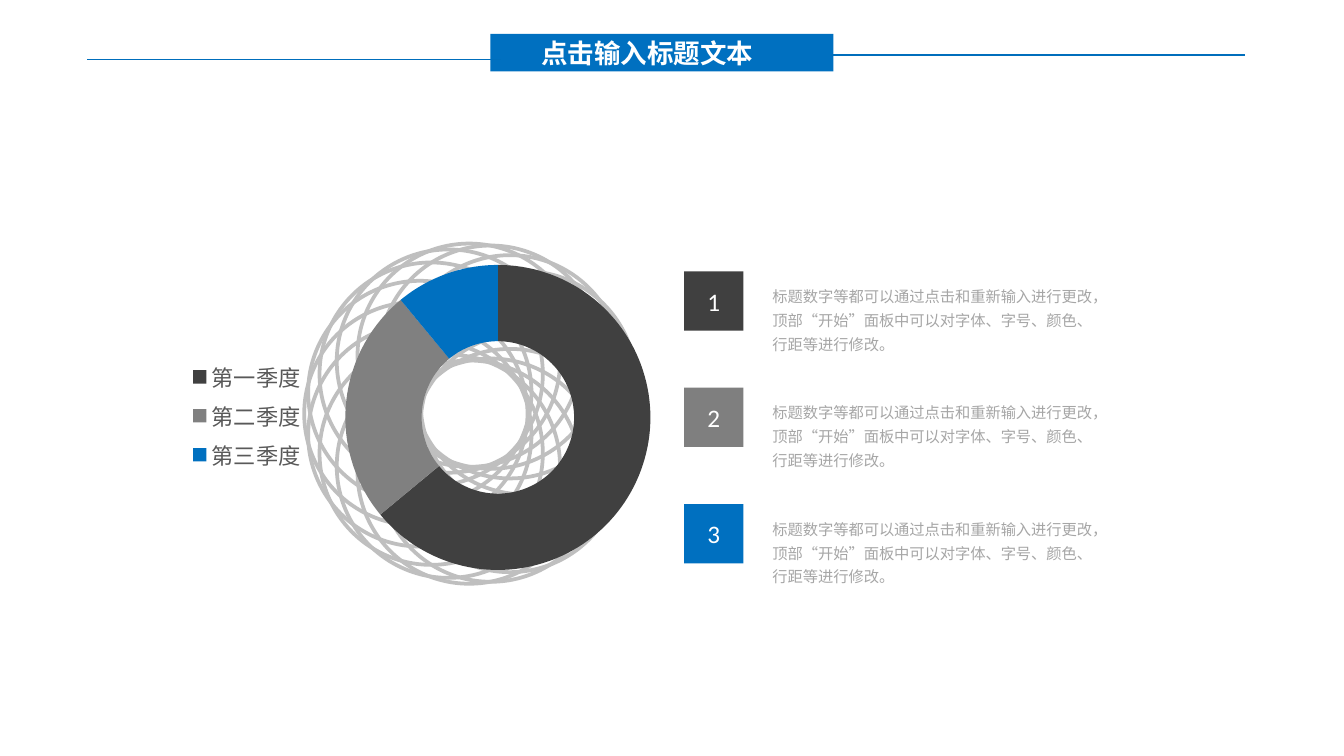
"""Build a quarterly doughnut slide with a rosette and three numbered notes."""
import math
from dataclasses import dataclass

import lxml.etree
import pptx
import pptx.chart.data
import pptx.dml.color
import pptx.enum.chart
import pptx.enum.shapes
import pptx.enum.text
import pptx.oxml.ns
import pptx.util
from pptx.dml.color import RGBColor
from pptx.util import Cm

WHITE = RGBColor(0xFF, 0xFF, 0xFF)
BLUE = RGBColor(0x00, 0x70, 0xC0)
RULE_BLUE = RGBColor(0x00, 0x6E, 0xBC)
DARK = RGBColor(0x40, 0x40, 0x40)
SLICE_GRAY = RGBColor(0x80, 0x80, 0x80)
BADGE_GRAY = RGBColor(0x7F, 0x7F, 0x7F)
LEGEND_GRAY = RGBColor(0x59, 0x59, 0x59)
NOTE_GRAY = RGBColor(0xA6, 0xA6, 0xA6)
RING_GRAY = RGBColor(0xBF, 0xBF, 0xBF)
LATIN = "Calibri"
CHINESE = "Noto Sans CJK SC"
NOTE = "标题数字等都可以通过点击和重新输入进行更改，顶部“开始”面板中可以对字体、字号、颜色、行距等进行修改。"
RING_COUNT = 17
NOTE_PITCH = 2.2


@dataclass(frozen=True)
class Area:
    left: float
    top: float
    width: float
    height: float

    def lengths(self) -> tuple:
        return Cm(self.left), Cm(self.top), Cm(self.width), Cm(self.height)


@dataclass(frozen=True)
class Quarter:
    name: str
    value: int
    slice_color: RGBColor
    badge_color: RGBColor


@dataclass(frozen=True)
class Rule:
    start: float
    end: float
    height: float


QUARTERS = (
    Quarter("第一季度", 64, DARK, DARK),
    Quarter("第二季度", 25, SLICE_GRAY, BADGE_GRAY),
    Quarter("第三季度", 11, BLUE, BLUE),
)
RULES = (Rule(1.65, 9.47, 1.12), Rule(15.7, 23.52, 1.04))
PLOT_LAYOUT = {"layoutTarget": "inner", "xMode": "edge", "yMode": "edge",
               "x": 0.33, "y": 0.06, "w": 0.6, "h": 0.89}


def format_text(frame, size: float, name: str, color: RGBColor, bold: bool = False) -> None:
    for para in frame.paragraphs:
        for span in para.runs:
            span.font.size = pptx.util.Pt(size)
            span.font.name = name
            span.font.bold = bold
            span.font.color.rgb = color
            east_asian = lxml.etree.SubElement(
                span.font._element, pptx.oxml.ns.qn("a:ea"))
            east_asian.set("typeface", name)


def add_block(page, area: Area, color: RGBColor):
    block = page.shapes.add_shape(
        pptx.enum.shapes.MSO_SHAPE.RECTANGLE, *area.lengths())
    block.shadow.inherit = False
    block.fill.solid()
    block.fill.fore_color.rgb = color
    block.line.fill.background()
    return block


def add_rosette(page, center_x: float, center_y: float, radius: float, size: float) -> None:
    rosette = page.shapes.add_group_shape()
    angles = [2 * math.pi * step / RING_COUNT for step in range(RING_COUNT)]
    offsets = [(0, 0)] + [(-radius * math.cos(angle), -radius * math.sin(angle))
                          for angle in angles]
    for across, down in offsets:
        area = Area(center_x + across - size / 2, center_y + down - size / 2, size, size)
        ring = rosette.shapes.add_shape(
            pptx.enum.shapes.MSO_SHAPE.OVAL, *area.lengths())
        ring.shadow.inherit = False
        ring.fill.background()
        ring.line.color.rgb = RING_GRAY
        ring.line.width = pptx.util.Pt(2)


def add_doughnut(page, area: Area) -> None:
    data = pptx.chart.data.CategoryChartData()
    data.categories = [quarter.name for quarter in QUARTERS]
    data.add_series("Series 1", [quarter.value for quarter in QUARTERS])
    chart = page.shapes.add_chart(
        pptx.enum.chart.XL_CHART_TYPE.DOUGHNUT, *area.lengths(), data).chart
    chart.has_title = False
    chart.font.size = pptx.util.Pt(10)
    chart.font.name = LATIN
    chart.has_legend = True
    chart.legend.position = pptx.enum.chart.XL_LEGEND_POSITION.LEFT
    chart.legend.include_in_layout = False
    chart.legend.font.size = pptx.util.Pt(11.9)
    chart.legend.font.name = LATIN
    chart.legend.font.color.rgb = LEGEND_GRAY
    plot = chart.plots[0]
    plot.vary_by_categories = True
    for index, quarter in enumerate(QUARTERS):
        fill = plot.series[0].points[index].format.fill
        fill.solid()
        fill.fore_color.rgb = quarter.slice_color
    qn = pptx.oxml.ns.qn
    for hole in chart.element.iter(qn("c:holeSize")):
        hole.set("val", "62")
    plot_area = chart.element.find(".//" + qn("c:plotArea"))
    for layout in plot_area.findall(qn("c:layout")):
        plot_area.remove(layout)
    layout = lxml.etree.Element(qn("c:layout"))
    plot_area.insert(0, layout)
    manual = lxml.etree.SubElement(layout, qn("c:manualLayout"))
    for key, value in PLOT_LAYOUT.items():
        lxml.etree.SubElement(manual, qn("c:" + key)).set("val", str(value))


def add_badge(page, number: int, color: RGBColor) -> None:
    top = 5.13 + (number - 1) * NOTE_PITCH
    badge = add_block(page, Area(12.93, top, 1.12, 1.12), color)
    frame = badge.text_frame
    frame.text = str(number)
    frame.vertical_anchor = pptx.enum.text.MSO_ANCHOR.MIDDLE
    frame.paragraphs[0].alignment = pptx.enum.text.PP_ALIGN.CENTER
    format_text(frame, 13.5, LATIN, WHITE)


def add_note(page, number: int) -> None:
    top = 5.2 + (number - 1) * NOTE_PITCH
    box = page.shapes.add_textbox(*Area(14.35, top, 6.78, 1.63).lengths())
    frame = box.text_frame
    frame.word_wrap = True
    frame.auto_size = pptx.enum.text.MSO_AUTO_SIZE.SHAPE_TO_FIT_TEXT
    frame.text = NOTE
    frame.paragraphs[0].line_spacing = 1.3
    format_text(frame, 8.2, CHINESE, NOTE_GRAY)


def place_title(page, area: Area) -> None:
    title = page.shapes.title
    title.left, title.top, title.width, title.height = area.lengths()
    page.shapes.element.append(title.element)
    frame = title.text_frame
    frame.text = "点击输入标题文本"
    frame.word_wrap = True
    frame.auto_size = pptx.enum.text.MSO_AUTO_SIZE.SHAPE_TO_FIT_TEXT
    frame.vertical_anchor = pptx.enum.text.MSO_ANCHOR.TOP
    frame.paragraphs[0].alignment = pptx.enum.text.PP_ALIGN.LEFT
    format_text(frame, 14.2, CHINESE, WHITE, bold=True)


def add_rule(page, rule: Rule) -> None:
    line = page.shapes.add_connector(
        pptx.enum.shapes.MSO_CONNECTOR.STRAIGHT,
        Cm(rule.start), Cm(rule.height), Cm(rule.end), Cm(rule.height))
    line.line.color.rgb = RULE_BLUE
    line.line.width = pptx.util.Pt(0.75)
    lxml.etree.SubElement(line.element.spPr, pptx.oxml.ns.qn("a:effectLst"))


def main() -> None:
    deck = pptx.Presentation()
    deck.slide_width, deck.slide_height = Cm(25.4), Cm(14.29)
    page = deck.slides.add_slide(deck.slide_layouts[5])
    add_rosette(page, 8.97, 7.82, 1.11, 4.22)
    add_doughnut(page, Area(3.3, 4.62, 9.7, 6.48))
    for number, quarter in enumerate(QUARTERS, start=1):
        add_badge(page, number, quarter.badge_color)
        add_note(page, number)
    add_block(page, Area(9.27, 0.64, 6.48, 0.71), BLUE)
    place_title(page, Area(9.98, 0.58, 4.72, 0.86))
    for rule in RULES:
        add_rule(page, rule)
    deck.save("out.pptx")


if __name__ == "__main__":
    main()
